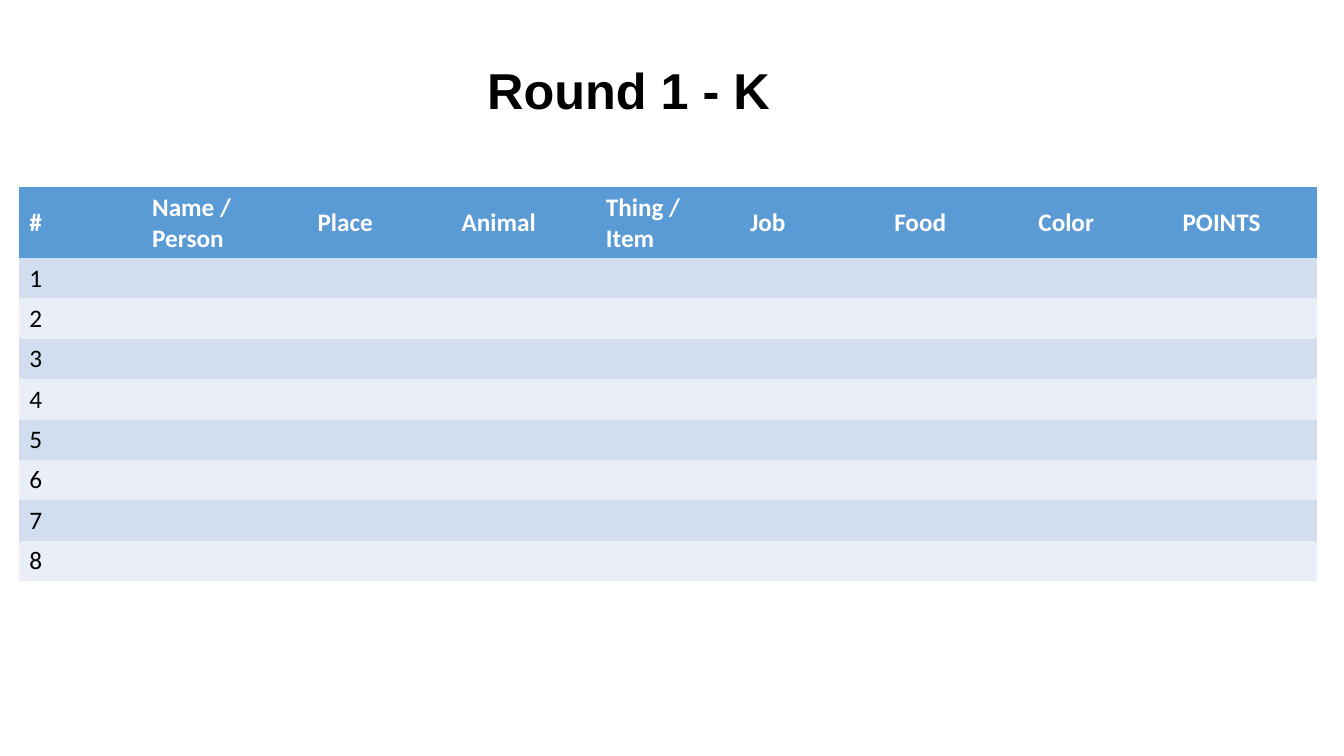
from dataclasses import dataclass

from pptx import Presentation
from pptx.dml.color import RGBColor
from pptx.enum import text
from pptx.oxml import ns
from pptx.util import Inches, Pt


@dataclass(frozen=True)
class Theme:
    title_font: str = "Arial"
    table_font: str = "Calibri"
    title_size: int = 36
    table_size: int = 18
    ink: str = "000000"
    header_ink: str = "FFFFFF"
    header_fill: str = "5B9BD5"
    band_fills: tuple = ("D2DEEF", "EAEFF7")


THEME = Theme()
CATEGORIES = ["#", "Name / Person", "Place", "Animal", "Thing / Item",
              "Job", "Food", "Color", "POINTS"]
ROUND_LINES = 8
COLUMN_WIDTHS = [1.22, 1.64] + [1.43] * 7
HEADER_HEIGHT = 0.7
LINE_HEIGHT = 0.4
PLAIN_TABLE_STYLE = "{2D5ABB26-0587-4C30-8999-92F81FD0307C}"


def style_paragraph(paragraph, font_name, size, color, bold=False):
    font = paragraph.font
    font.name = font_name
    font.size = Pt(size)
    font.bold = bold
    font.color.rgb = RGBColor.from_string(color)


def add_title(slide, wording):
    title = slide.shapes.title
    title.left, title.top = Inches(3.1), Inches(0.53)
    title.width, title.height = Inches(6.27), Inches(0.71)
    frame = title.text_frame
    frame.text = wording
    frame.word_wrap = True
    frame.auto_size = text.MSO_AUTO_SIZE.SHAPE_TO_FIT_TEXT
    frame.vertical_anchor = text.MSO_ANCHOR.MIDDLE
    heading = frame.paragraphs[0]
    heading.alignment = text.PP_ALIGN.CENTER
    style_paragraph(heading, THEME.title_font, THEME.title_size, THEME.ink, True)


def fill_cell(cell, wording, fill, ink, bold):
    cell.fill.solid()
    cell.fill.fore_color.rgb = RGBColor.from_string(fill)
    cell.vertical_anchor = text.MSO_ANCHOR.MIDDLE
    cell.text = wording
    style_paragraph(cell.text_frame.paragraphs[0], THEME.table_font,
                    THEME.table_size, ink, bold)


def add_score_table(slide):
    heights = [HEADER_HEIGHT] + [LINE_HEIGHT] * ROUND_LINES
    frame = slide.shapes.add_table(
        len(heights), len(CATEGORIES), Inches(0.19), Inches(1.86),
        Inches(sum(COLUMN_WIDTHS)), Inches(sum(heights)))
    scores = frame.table
    frame._element.find(".//" + ns.qn("a:tableStyleId")).text = PLAIN_TABLE_STYLE
    for column, width in zip(scores.columns, COLUMN_WIDTHS):
        column.width = Inches(width)
    for row, height in zip(scores.rows, heights):
        row.height = Inches(height)
    for index, category in enumerate(CATEGORIES):
        fill_cell(scores.cell(0, index), category, THEME.header_fill,
                  THEME.header_ink, True)
        for line in range(1, ROUND_LINES + 1):
            fill_cell(scores.cell(line, index), str(line) if index == 0 else "",
                      THEME.band_fills[(line - 1) % 2], THEME.ink, False)


def main():
    deck = Presentation()
    deck.slide_width, deck.slide_height = Inches(13.33), Inches(7.5)
    slide = deck.slides.add_slide(deck.slide_layouts[5])
    add_title(slide, "Round 1 - K")
    add_score_table(slide)
    deck.save("out.pptx")


if __name__ == "__main__":
    main()
